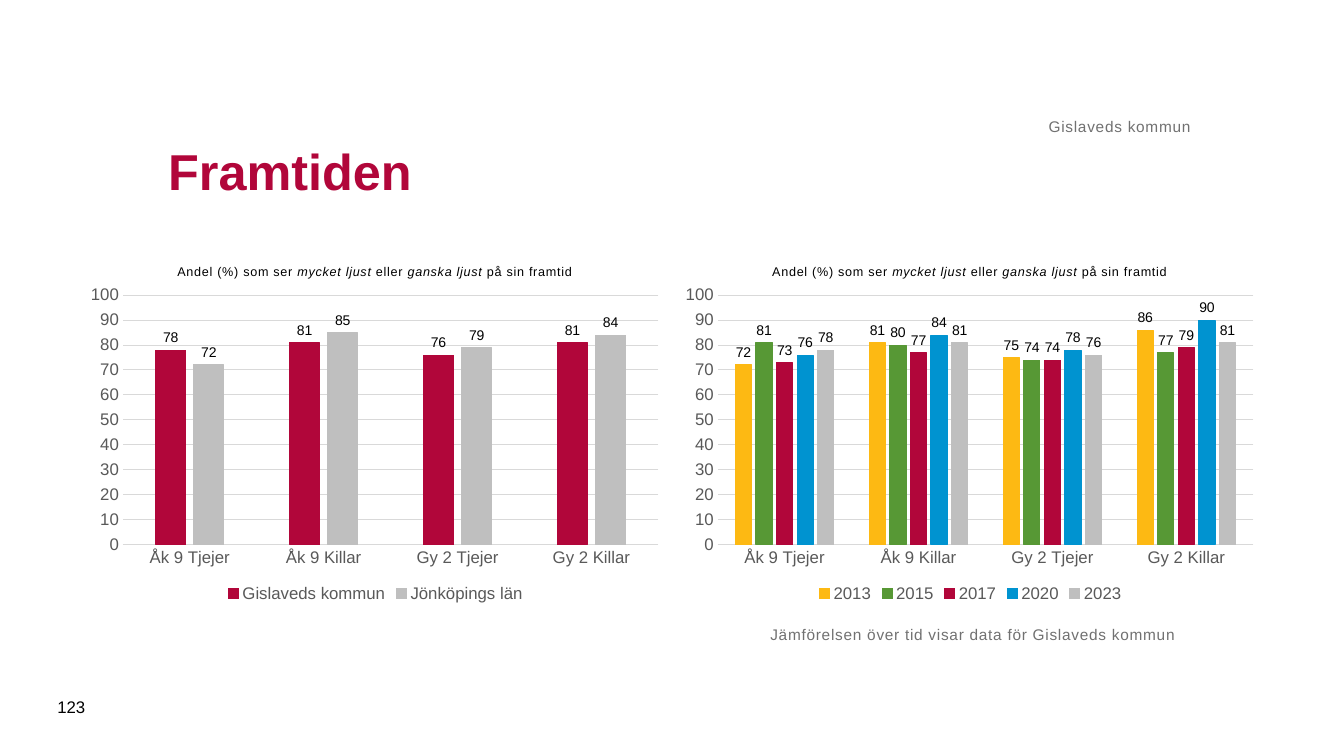
from lxml import etree
from pptx import Presentation
from pptx import util as u
from pptx.chart.data import CategoryChartData
from pptx.dml.color import RGBColor
from pptx.enum import chart as ch, text
from pptx.oxml.ns import qn

RED, GREY, GRID = "B1063A", "BFBFBF", "D9D9D9"
AXIS_TEXT, NOTE, BLACK = "595959", "717171", "000000"
CATEGORIES = ["Åk 9 Tjejer", "Åk 9 Killar", "Gy 2 Tjejer", "Gy 2 Killar"]
REGION_SERIES = [
    ("Gislaveds kommun", RED, (78, 81, 76, 81)),
    ("Jönköpings län", GREY, (72, 85, 79, 84)),
]
YEAR_SERIES = [
    ("2013", "FDB913", (72, 81, 75, 86)),
    ("2015", "579835", (81, 80, 74, 77)),
    ("2017", RED, (73, 77, 74, 79)),
    ("2020", "0093D0", (76, 84, 78, 90)),
    ("2023", GREY, (78, 81, 76, 81)),
]
CHART_TITLE = [
    ("Andel (%) som ser ", False), ("mycket ljust", True), (" eller ", False),
    ("ganska ljust", True), (" på sin framtid", False),
]
PERCENT = "#,##0;#,##0"


def rgb(value):
    """Turn a hex string into a colour."""
    return RGBColor.from_string(value)


def set_font(font, size, color, bold=False):
    """Apply the slide's typeface with a size and colour."""
    font.name, font.size, font.bold = "Arial", u.Pt(size), bold
    font.color.rgb = rgb(color)


def add_run(p, words, size, color, bold=False, spacing=0):
    """Add one formatted run, with letter spacing in points."""
    r = p.add_run()
    r.text = words
    set_font(r.font, size, color, bold)
    if spacing:
        r.font._element.set("spc", str(round(spacing * 100)))
    return r


def add_text(s, box, words, size, color, anchor="TOP", align="LEFT",
             inset=True, bold=False, spacing=0):
    """Place a single paragraph in a text box."""
    tf = s.shapes.add_textbox(*map(u.Inches, box)).text_frame
    tf.word_wrap = True
    tf.vertical_anchor = getattr(text.MSO_ANCHOR, anchor)
    if not inset:
        tf.margin_left = tf.margin_right = tf.margin_top = tf.margin_bottom = 0
    p = tf.paragraphs[0]
    p.alignment = getattr(text.PP_ALIGN, align)
    add_run(p, words, size, color, bold, spacing)


def set_layout(parent, index, **fractions):
    """Fix a chart part's place as fractions of the chart."""
    for old in parent.findall(qn("c:layout")):
        parent.remove(old)
    layout = etree.Element(qn("c:layout"))
    parent.insert(index, layout)
    manual = etree.SubElement(layout, qn("c:manualLayout"))
    if "w" in fractions:
        etree.SubElement(manual, qn("c:layoutTarget")).set("val", "inner")
    for key in ("x", "y"):
        etree.SubElement(manual, qn(f"c:{key}Mode")).set("val", "edge")
    for key, value in fractions.items():
        etree.SubElement(manual, qn(f"c:{key}")).set("val", str(value))


def style_axes(chart):
    """Format both axes and the gridlines."""
    for axis in (chart.category_axis, chart.value_axis):
        axis.major_tick_mark = axis.minor_tick_mark = ch.XL_TICK_MARK.NONE
        set_font(axis.tick_labels.font, 12, AXIS_TEXT)
    values = chart.value_axis
    values.minimum_scale, values.maximum_scale, values.major_unit = 0, 100, 10
    values.tick_labels.number_format = PERCENT
    values.tick_labels.number_format_is_linked = False
    values.format.line.fill.background()
    for line in (chart.category_axis.format.line,
                 values.major_gridlines.format.line):
        line.color.rgb = rgb(GRID)
        line.width = u.Pt(0.75)


def add_column_chart(s, box, series):
    """Draw a titled clustered column chart in the box."""
    data = CategoryChartData(number_format=PERCENT)
    data.categories = CATEGORIES
    for name, _, values in series:
        data.add_series(name, values)
    chart = s.shapes.add_chart(
        ch.XL_CHART_TYPE.COLUMN_CLUSTERED, *map(u.Inches, box), data).chart
    set_font(chart.font, 10, BLACK)
    p = chart.chart_title.text_frame.paragraphs[0]
    for words, italic in CHART_TITLE:
        add_run(p, words, 9, BLACK, spacing=0.5).font.italic = italic
    chart.chart_title.include_in_layout = False
    set_layout(chart.chart_title._element, 1, x=0.16, y=0.05)
    style_axes(chart)
    plot = chart.plots[0]
    set_layout(plot._element.getparent(), 0, x=0.073, y=0.146, w=0.905, h=0.684)
    plot.gap_width, plot.overlap = 219, -27
    plot.vary_by_categories = False
    for bars, (_, color, _) in zip(plot.series, series):
        bars.format.fill.solid()
        bars.format.fill.fore_color.rgb = rgb(color)
        bars.format.line.color.rgb = rgb(color)
        bars.format.line.width = u.Pt(0.75)
    plot.has_data_labels = True
    labels = plot.data_labels
    labels.show_value = True
    labels.position = ch.XL_LABEL_POSITION.OUTSIDE_END
    labels.number_format, labels.number_format_is_linked = PERCENT, False
    set_font(labels.font, 10, BLACK)
    chart.has_legend = True
    chart.legend.position = ch.XL_LEGEND_POSITION.BOTTOM
    chart.legend.include_in_layout = False
    set_font(chart.legend.font, 12, AXIS_TEXT)


def add_header(s, left, top, width):
    """Place the municipality line and the slide title."""
    add_text(s, (left, top + 0.36, width, 1.42), "Framtiden", 36, RED,
             "MIDDLE", bold=True)
    add_text(s, (left, top, width, 0.73), "Gislaveds kommun", 11, NOTE,
             "BOTTOM", "RIGHT", inset=False, spacing=0.5)


def add_charts(s, left, top, width, height):
    """Place the regional and yearly charts side by side."""
    for i, series in enumerate((REGION_SERIES, YEAR_SERIES)):
        add_column_chart(s, (left + i * (width + 0.03), top, width, height),
                         series)


def add_footer(s, left, top):
    """Place the comparison note and the page number."""
    add_text(s, (left + 7.17, top, 5.31, 0.94),
             "Jämförelsen över tid visar data för Gislaveds kommun",
             11, NOTE, inset=False, spacing=0.5)
    add_text(s, (left, top + 0.61, 0.57, 0.4), "123", 12, BLACK, "MIDDLE")


def main():
    """Build and save the slide."""
    prs = Presentation()
    prs.slide_width, prs.slide_height = u.Inches(13.33), u.Inches(7.5)
    s = prs.slides.add_slide(prs.slide_layouts[6])
    add_charts(s, 0.79, 2.4, 5.87, 3.62)
    add_header(s, 1.57, 0.62, 10.24)
    add_footer(s, 0.47, 6.2)
    prs.save("out.pptx")


if __name__ == "__main__":
    main()
